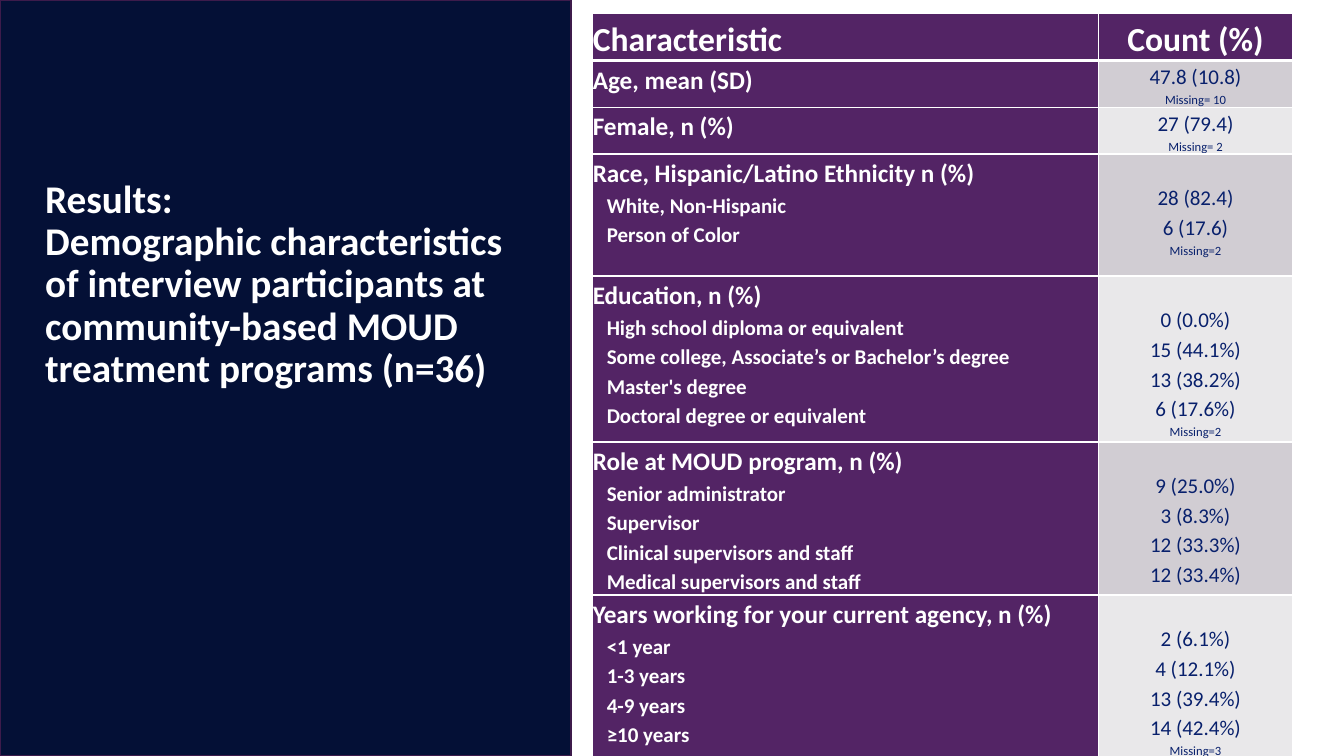
from lxml import etree
from pptx import Presentation
from pptx import util as u
from pptx.dml import color
from pptx.enum import shapes, text
from pptx.oxml import ns

WHITE, NAVY, PURPLE, BLUE = "FFFFFF", "041036", "532465", "08206C"
BANDS = ["D1CDD3", "E9E8EA"]


def rgb(value):
    return color.RGBColor.from_string(value)


def write(frame, content, size=15, ink=WHITE, bold=True, spacing=1.15,
          align=text.PP_ALIGN.LEFT, indent=0):
    paragraph = frame.paragraphs[0]
    if paragraph.runs:
        paragraph = frame.add_paragraph()
    paragraph.text = content
    paragraph.alignment = align
    paragraph.line_spacing = spacing
    if indent:
        paragraph._p.get_or_add_pPr().set("marL", str(u.Pt(indent)))
    for run in paragraph.runs:
        run.font.name = "Calibri"
        run.font.size = u.Pt(size)
        run.font.bold = bold
        run.font.color.rgb = rgb(ink)


presentation = Presentation()
presentation.slide_width = u.Pt(960)
presentation.slide_height = u.Pt(540)
slide = presentation.slides.add_slide(presentation.slide_layouts[6])

panel = slide.shapes.add_shape(
    shapes.MSO_SHAPE.RECTANGLE, u.Pt(0), u.Pt(0), u.Pt(408), u.Pt(540))
panel.shadow.inherit = False
panel.fill.solid()
panel.fill.fore_color.rgb = rgb(NAVY)
panel.line.color.rgb = rgb("3D1B4B")
panel.line.width = u.Pt(1)

title = slide.shapes.add_textbox(u.Pt(25.2), u.Pt(22.3), u.Pt(361), u.Pt(260.6))
title.text_frame.word_wrap = True
title.text_frame.vertical_anchor = text.MSO_ANCHOR.BOTTOM
write(title.text_frame,
      "Results:\vDemographic characteristics of interview participants at "
      "community-based MOUD treatment programs (n=36)",
      size=28, spacing=0.9)

characteristics = [
    ("Age, mean (SD)", [], ["47.8 (10.8)"], "Missing= 10", 33.4),
    ("Female, n (%)", [], ["27 (79.4)"], "Missing= 2", 33.4),
    ("Race, Hispanic/Latino Ethnicity n (%)",
     ["White, Non-Hispanic", "Person of Color"],
     ["28 (82.4)", "6 (17.6)"], "Missing=2", 87.2),
    ("Education, n (%)",
     ["High school diploma or equivalent",
      "Some college, Associate’s or Bachelor’s degree",
      "Master's degree", "Doctoral degree or equivalent"],
     ["0 (0.0%)", "15 (44.1%)", "13 (38.2%)", "6 (17.6%)"], "Missing=2", 118.5),
    ("Role at MOUD program, n (%)",
     ["Senior administrator", "Supervisor", "Clinical supervisors and staff",
      "Medical supervisors and staff"],
     ["9 (25.0%)", "3 (8.3%)", "12 (33.3%)", "12 (33.4%)"], None, 109.4),
    ("Years working for your current agency, n (%)",
     ["<1 year", "1-3 years", "4-9 years", "≥10 years"],
     ["2 (6.1%)", "4 (12.1%)", "13 (39.4%)", "14 (42.4%)"], "Missing=3", 114.5),
]
heights = [33.6] + [entry[-1] for entry in characteristics]

table = slide.shapes.add_table(
    len(heights), 2, u.Pt(423.4), u.Pt(9.6), u.Pt(499.7), u.Pt(sum(heights))).table
table.horz_banding = False
table.columns[0].width = u.Pt(361.4)
table.columns[1].width = u.Pt(138.3)

for row, height in enumerate(heights):
    table.rows[row].height = u.Pt(height)
    for column in range(2):
        cell = table.cell(row, column)
        cell.margin_left = cell.margin_right = 0
        cell.margin_top = cell.margin_bottom = 0
        for side in "LRTB":
            thick = (row, side) in [(0, "B"), (1, "T")]
            border = etree.SubElement(
                cell._tc.get_or_add_tcPr(), ns.qn("a:ln" + side),
                w=str(u.Pt(3 if thick else 1)))
            paint = etree.SubElement(border, ns.qn("a:solidFill"))
            etree.SubElement(paint, ns.qn("a:srgbClr"), val=WHITE)
        cell.fill.solid()
        is_count = row > 0 and column == 1
        cell.fill.fore_color.rgb = rgb(BANDS[(row - 1) % 2] if is_count else PURPLE)

center = text.PP_ALIGN.CENTER
write(table.cell(0, 0).text_frame, "Characteristic", size=24)
write(table.cell(0, 1).text_frame, "Count (%)", size=24, align=center)

for row, (label, levels, counts, missing, height) in enumerate(characteristics, 1):
    label_cell, count_cell = table.cell(row, 0), table.cell(row, 1)
    write(label_cell.text_frame, label, size=18)
    for level in levels:
        write(label_cell.text_frame, level, indent=10)
    if levels:
        count_cell.margin_top = u.Pt(20)
    for count in counts:
        write(count_cell.text_frame, count, ink=BLUE, bold=False, align=center)
    if missing:
        write(count_cell.text_frame, missing, size=9, ink=BLUE, bold=False, align=center)

presentation.save("out.pptx")
